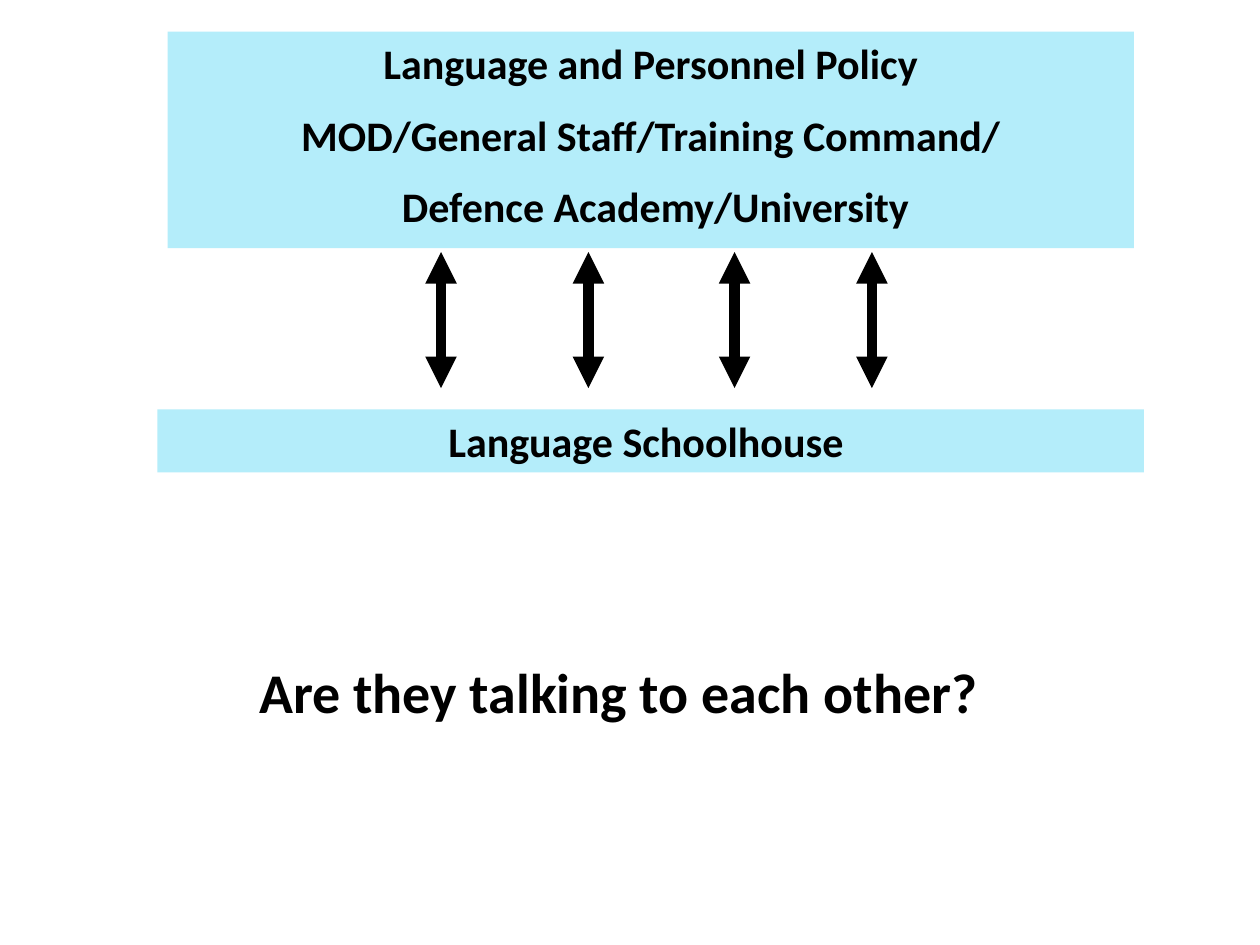
from lxml import etree
from pptx import Presentation
from pptx.dml.color import RGBColor
from pptx.enum.shapes import MSO_CONNECTOR, MSO_SHAPE
from pptx.enum.text import MSO_ANCHOR, PP_ALIGN
from pptx.oxml.ns import qn
from pptx.util import Inches, Pt

RECTANGLE = MSO_SHAPE.RECTANGLE
STRAIGHT = MSO_CONNECTOR.STRAIGHT
TOP = MSO_ANCHOR.TOP
LEFT, CENTER = PP_ALIGN.LEFT, PP_ALIGN.CENTER

FONT = "Calibri"
COLORS = {"band": "B4EDFA", "ink": "000000"}
BLANK_LAYOUT = 6

POLICY_LINES = [
    "Language and Personnel Policy",
    "MOD/General Staff/Training Command/",
    " Defence Academy/University",
]
ARROW_POSITIONS = [3.5, 4.67, 5.83, 6.92]


def color(name):
    return RGBColor.from_string(COLORS[name])


def write_lines(text_frame, lines, size, alignment):
    text_frame.word_wrap = True
    text_frame.vertical_anchor = TOP
    text_frame.text = "\n".join(lines)
    for paragraph in text_frame.paragraphs:
        paragraph.alignment = alignment
        paragraph.space_before = Pt(size / 2)
        for run in paragraph.runs:
            run.font.name = FONT
            run.font.size = Pt(size)
            run.font.bold = True
            run.font.color.rgb = color("ink")


def add_band(slide, left, top, width, height, lines):
    band = slide.shapes.add_shape(
        RECTANGLE, Inches(left), Inches(top), Inches(width), Inches(height))
    band.shadow.inherit = False
    band.fill.solid()
    band.fill.fore_color.rgb = color("band")
    band.line.fill.background()
    write_lines(band.text_frame, lines, 24, CENTER)


def add_double_arrow(slide, x, top, bottom):
    arrow = slide.shapes.add_connector(
        STRAIGHT, Inches(x), Inches(top), Inches(x), Inches(bottom))
    arrow.line.color.rgb = color("ink")
    arrow.line.width = Pt(6)
    line = arrow.line._get_or_add_ln()
    for end in ("a:headEnd", "a:tailEnd"):
        etree.SubElement(line, qn(end), type="triangle")
    etree.SubElement(arrow._element.spPr, qn("a:effectLst"))


def add_question(slide, left, top, width, height):
    box = slide.shapes.add_textbox(
        Inches(left), Inches(top), Inches(width), Inches(height))
    box.text_frame.margin_left = Inches(1.81)
    write_lines(box.text_frame, ["Are they talking to each other?"], 32, LEFT)


def main():
    presentation = Presentation()
    presentation.slide_width = Inches(10)
    presentation.slide_height = Inches(7.5)
    slide = presentation.slides.add_slide(
        presentation.slide_layouts[BLANK_LAYOUT])

    add_band(slide, 1.33, 0.25, 7.67, 1.72, POLICY_LINES)
    add_band(slide, 1.25, 3.25, 7.83, 0.5, ["Language Schoolhouse "])
    for x in ARROW_POSITIONS:
        add_double_arrow(slide, x, 2, 3.08)
    add_question(slide, 0.25, 5.17, 9.58, 0.64)

    presentation.save("out.pptx")


if __name__ == "__main__":
    main()
